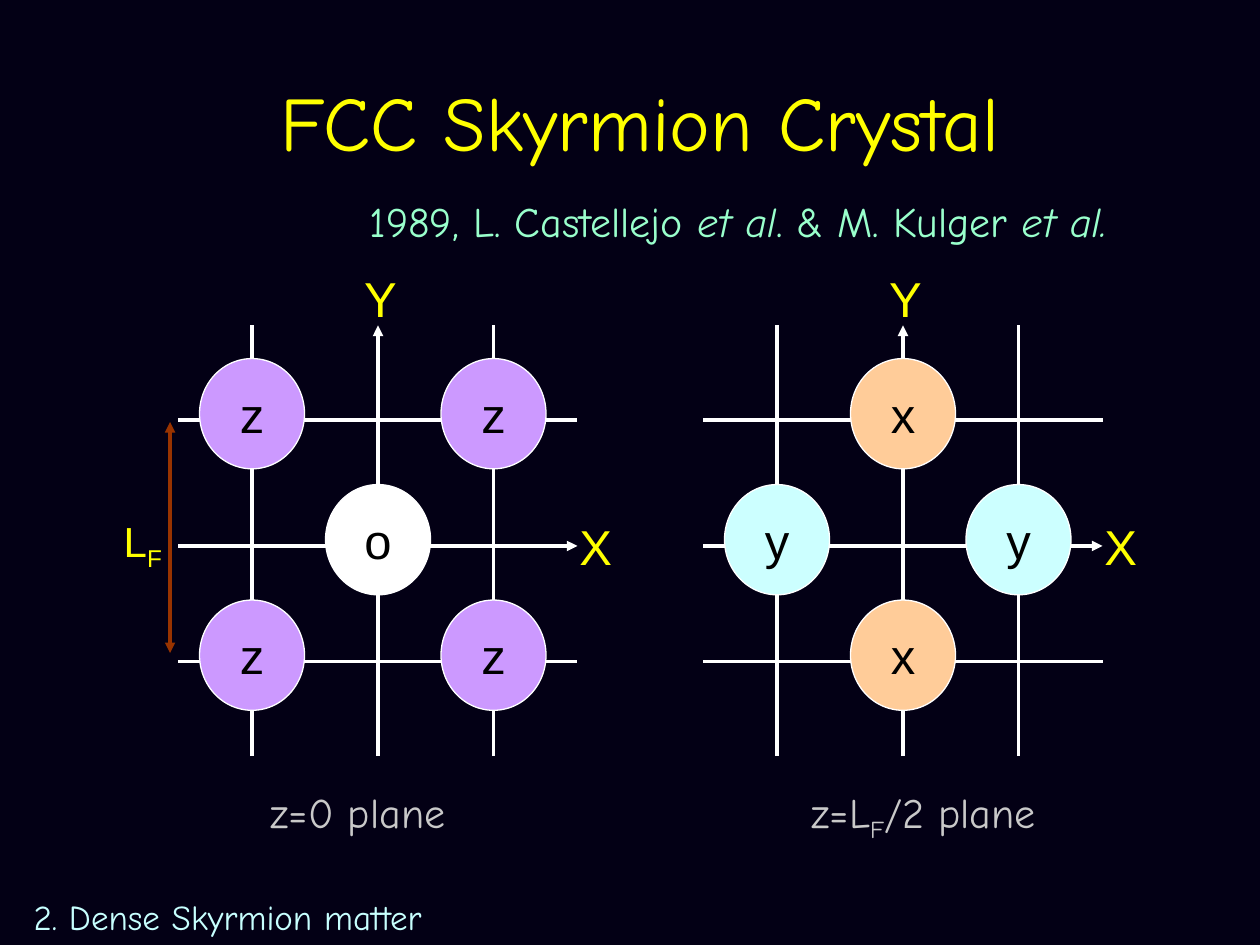
from dataclasses import dataclass

from lxml.etree import SubElement
from pptx import Presentation
from pptx.dml.color import RGBColor
from pptx.enum.shapes import MSO_CONNECTOR, MSO_SHAPE
from pptx.enum.text import MSO_ANCHOR, PP_ALIGN
from pptx.oxml.ns import qn
from pptx.slide import Slide
from pptx.util import Inches, Length, Pt

NIGHT = RGBColor(0x03, 0x00, 0x15)
WHITE = RGBColor(0xFF, 0xFF, 0xFF)
BLACK = RGBColor(0x00, 0x00, 0x00)
YELLOW = RGBColor(0xFF, 0xFF, 0x00)
MINT = RGBColor(0x99, 0xFF, 0xCC)
GREY = RGBColor(0xC9, 0xC9, 0xC9)
ICE = RGBColor(0xC7, 0xFF, 0xFF)
CYAN = RGBColor(0xCC, 0xFF, 0xFF)
PEACH = RGBColor(0xFF, 0xCC, 0x99)
VIOLET = RGBColor(0xCC, 0x99, 0xFF)
BROWN = RGBColor(0x99, 0x33, 0x00)

PLAIN, HAND = "Arial", "Comic Neue"

# The slide is a grid of 120 columns by 90 rows, 12 to the inch.
COLUMNS, ROWS, PER_INCH = 120, 90, 12
LATTICE_COLUMNS = (7, 19, 30)  # counted from the panel's left edge
LATTICE_ROWS = (40, 52, 63)
PANEL_WIDTH, PANEL_TOP, PANEL_BOTTOM = 38, 31, 72
BALL_WIDTH, BALL_HEIGHT, BALL_LIFT = 10, 10.5, 0.6


@dataclass(frozen=True)
class Run:
    text: str
    italic: bool = False
    subscript: bool = False


@dataclass(frozen=True)
class Label:
    runs: tuple[Run, ...]
    left: float
    top: float
    width: float
    height: float
    size: int
    color: RGBColor
    font: str = HAND
    centred: bool = False
    wrap: bool = False


@dataclass(frozen=True)
class Ball:
    text: str
    column: int
    row: int
    color: RGBColor


@dataclass(frozen=True)
class Panel:
    left: float
    balls: tuple[Ball, ...]
    caption: tuple[Run, ...]
    caption_left: float
    caption_width: float


PANELS = (
    Panel(
        17,
        tuple(Ball("z", column, row, VIOLET) for column in (0, 2) for row in (0, 2))
        + (Ball("o", 1, 1, WHITE),),
        (Run("z=0 plane"),), 24.6, 19.8,
    ),
    Panel(
        67,
        tuple(Ball("x", 1, row, PEACH) for row in (0, 2))
        + tuple(Ball("y", column, 1, CYAN) for column in (0, 2)),
        (Run("z=L"), Run("F", subscript=True), Run("/2 plane")), 76.1, 25.7,
    ),
)

LABELS = (
    Label((Run("FCC Skyrmion Crystal"),), 10, 4, 102, 15, 44, YELLOW,
          centred=True, wrap=True),
    Label((Run("1989, L. Castellejo "), Run("et al", italic=True),
           Run(". & M. Kulger "), Run("et al.", italic=True)),
          34, 18, 80.5, 6, 24, MINT),
    Label((Run("L"), Run("F", subscript=True)), 10.6, 48.5, 6.2, 6, 24, YELLOW, PLAIN),
    Label((Run("2. Dense Skyrmion matter"),), 0, 84.7, 43.4, 5.3, 20, ICE, centred=True),
)


def grid(steps: float) -> Length:
    return Inches(steps / PER_INCH)


def add_label(slide: Slide, label: Label) -> None:
    box = slide.shapes.add_textbox(
        grid(label.left), grid(label.top), grid(label.width), grid(label.height))
    frame = box.text_frame
    frame.word_wrap = label.wrap
    frame.vertical_anchor = MSO_ANCHOR.MIDDLE if label.wrap else MSO_ANCHOR.TOP
    paragraph = frame.paragraphs[0]
    paragraph.alignment = PP_ALIGN.CENTER if label.centred else PP_ALIGN.LEFT
    paragraph.font.size = Pt(label.size)
    paragraph.font.name = label.font
    paragraph.font.color.rgb = label.color
    for part in label.runs:
        run = paragraph.add_run()
        run.text = part.text
        if part.italic:
            run.font.italic = True
        if part.subscript:
            run._r.get_or_add_rPr().set("baseline", "-25000")


def add_line(slide: Slide, start: tuple[float, float], end: tuple[float, float],
             color: RGBColor = WHITE, arrows: tuple[str, ...] = ()) -> None:
    """Draw a line; arrows names its pointed ends, headEnd (start) before tailEnd."""
    connector = slide.shapes.add_connector(
        MSO_CONNECTOR.STRAIGHT, *map(grid, start + end))
    connector.line.color.rgb = color
    connector.line.width = Pt(2)
    for arrow in arrows:
        SubElement(connector.line._get_or_add_ln(), qn(f"a:{arrow}"), type="triangle")
    SubElement(connector._element.spPr, qn("a:effectLst"))


def add_ball(slide: Slide, panel: Panel, ball: Ball) -> None:
    center_x = panel.left + LATTICE_COLUMNS[ball.column]
    center_y = LATTICE_ROWS[ball.row] - BALL_LIFT
    shape = slide.shapes.add_shape(
        MSO_SHAPE.OVAL, grid(center_x - BALL_WIDTH / 2), grid(center_y - BALL_HEIGHT / 2),
        grid(BALL_WIDTH), grid(BALL_HEIGHT))
    shape.shadow.inherit = False
    shape.fill.solid()
    shape.fill.fore_color.rgb = ball.color
    shape.line.color.rgb = WHITE
    shape.line.width = Pt(0.75)
    frame = shape.text_frame
    frame.vertical_anchor = MSO_ANCHOR.MIDDLE
    paragraph = frame.paragraphs[0]
    paragraph.text = ball.text
    paragraph.alignment = PP_ALIGN.CENTER
    paragraph.font.size = Pt(28)
    paragraph.font.name = PLAIN
    paragraph.font.color.rgb = BLACK


def add_panel(slide: Slide, panel: Panel) -> None:
    """Draw one crystal plane; its middle column and row are the Y and X axes."""
    for index, (column, row) in enumerate(zip(LATTICE_COLUMNS, LATTICE_ROWS)):
        arrows = ("tailEnd",) if index == 1 else ()
        x = panel.left + column
        add_line(slide, (x, PANEL_BOTTOM), (x, PANEL_TOP), arrows=arrows)
        add_line(slide, (panel.left, row), (panel.left + PANEL_WIDTH, row), arrows=arrows)
    for ball in panel.balls:
        add_ball(slide, panel, ball)
    for name, left, top in (("Y", 16.5, 25), ("X", 37, 48.6)):
        add_label(slide, Label((Run(name),), panel.left + left, top, 5.5, 6.8,
                               28, YELLOW, PLAIN))
    add_label(slide, Label(panel.caption, panel.caption_left, 74.3,
                           panel.caption_width, 6, 24, GREY))


def main() -> None:
    presentation = Presentation()
    presentation.slide_width = grid(COLUMNS)
    presentation.slide_height = grid(ROWS)
    slide = presentation.slides.add_slide(presentation.slide_layouts[6])
    slide.background.fill.solid()
    slide.background.fill.fore_color.rgb = NIGHT
    for panel in PANELS:
        add_panel(slide, panel)
    add_line(slide, (16.2, 40.2), (16.2, 62.2), BROWN, ("headEnd", "tailEnd"))
    for label in LABELS:
        add_label(slide, label)
    presentation.save("out.pptx")


if __name__ == "__main__":
    main()
